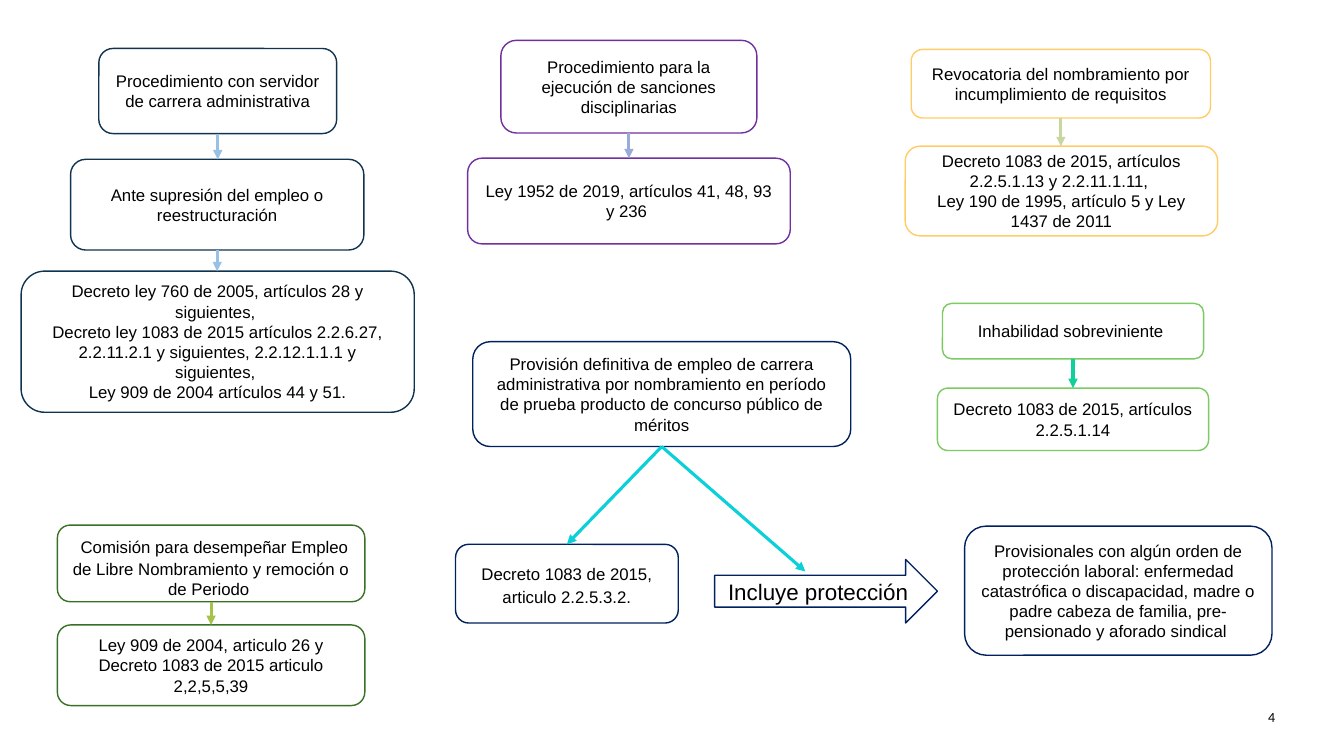
from lxml.etree import SubElement
from pptx import Presentation
from pptx.dml.color import RGBColor
from pptx.enum.shapes import MSO_CONNECTOR, MSO_SHAPE
from pptx.enum.text import MSO_ANCHOR, PP_ALIGN
from pptx.oxml.ns import qn
from pptx.util import Pt

COLORS = {
    "white": "FFFFFF", "black": "000000", "petrol": "103350", "purple": "7030A0",
    "amber": "FFCC66", "forest": "387026", "green": "7CCA62", "navy": "002060",
    "sky": "97C1E5", "lavender": "97ACD9", "olive": "C6D79F", "lime": "A5C249",
    "mint": "10CF9B", "cyan": "0BD0D9",
}

# Vertical chains: (outline, arrow colour, [(left, top, width, height, paragraphs), ...])
CHAINS = [
    ("petrol", "sky", [
        (70.6, 34.6, 169.9, 60.8, ["Procedimiento con servidor de carrera administrativa"]),
        (50.4, 113.8, 209.5, 64.8, ["Ante supresión del empleo o reestructuración"]),
        (15.1, 193.7, 280.8, 100.8, [
            "Decreto ley 760 de 2005, artículos 28 y siguientes, ",
            "Decreto ley 1083 de 2015 artículos 2.2.6.27, 2.2.11.2.1 y siguientes, "
            "2.2.12.1.1.1 y siguientes, ",
            "Ley 909 de 2004 artículos 44 y 51."]),
    ]),
    ("purple", "lavender", [
        (357.8, 28.8, 182.9, 66.2,
         ["Procedimiento para la ejecución de sanciones disciplinarias"]),
        (334.1, 113, 230.4, 61.2, ["Ley 1952 de 2019, artículos 41, 48, 93 y 236 "]),
    ]),
    ("amber", "olive", [
        (650.9, 35.3, 213.8, 49,
         ["Revocatoria del nombramiento por incumplimiento de requisitos"]),
        (646.6, 104.4, 223.2, 64.1, [
            "Decreto 1083 de 2015, artículos 2.2.5.1.13 y 2.2.11.1.11, ",
            "Ley 190 de 1995, artículo 5 y Ley 1437 de 2011"]),
    ]),
    ("forest", "lime", [
        (41, 375.1, 219.6, 54.7,
         [" Comisión para desempeñar Empleo de Libre Nombramiento y remoción o de Periodo "]),
        (41, 446.4, 219.6, 57.6,
         ["Ley 909 de 2004, articulo 26 y Decreto 1083 de 2015 articulo 2,2,5,5,39"]),
    ]),
    ("green", "mint", [
        (673.2, 216.7, 186.5, 39.6, ["Inhabilidad sobreviniente "]),
        (669.6, 277.2, 193.7, 44.6, ["Decreto 1083 de 2015, artículos 2.2.5.1.14"]),
    ]),
]

PROVISION = (337.7, 244.1, 270, 74.9, [
    "Provisión definitiva de empleo de carrera administrativa por nombramiento en período "
    "de prueba producto de concurso público de méritos"])
DECREE = (325.4, 388.8, 159.1, 56.2, ["Decreto 1083 de 2015, articulo 2.2.5.3.2."])
PROTECTION = (510.5, 399.6, 159.1, 45.4, ["Incluye protección"])
PROVISIONALS = (689, 375.8, 219.6, 92.2, [
    "Provisionales con algún orden de protección laboral: enfermedad catastrófica o "
    "discapacidad, madre o padre cabeza de familia, pre-pensionado y aforado sindical "])
PROTECTION_TIP = (575.3, 408.2)
PAGE_NUMBER = (886.3, 497.5, 31.7, 28.8, ["4"])
LEAD_SPACE_SIZE = 18


def color(name):
    return RGBColor.from_string(COLORS[name])


def fill_text(shape, paragraphs, size=12, font="Arial", align=PP_ALIGN.CENTER, spacing=None):
    frame = shape.text_frame
    frame.word_wrap = True
    frame.vertical_anchor = MSO_ANCHOR.MIDDLE
    for index, text in enumerate(paragraphs):
        para = frame.add_paragraph() if index else frame.paragraphs[0]
        para.alignment = align
        para.line_spacing = spacing
        words = text.lstrip()
        parts = [(words, size)]
        if words != text:
            parts.insert(0, (" ", LEAD_SPACE_SIZE))
        for part, part_size in parts:
            span = para.add_run()
            span.text = part
            span.font.size = Pt(part_size)
            span.font.name = font
            span.font.color.rgb = color("black")


def add_box(page, box, outline, kind=MSO_SHAPE.ROUNDED_RECTANGLE, **text_style):
    *bounds, paragraphs = box
    shape = page.shapes.add_shape(kind, *map(Pt, bounds))
    shape.shadow.inherit = False
    shape.fill.solid()
    shape.fill.fore_color.rgb = color("white")
    shape.line.color.rgb = color(outline)
    shape.line.width = Pt(1)
    fill_text(shape, paragraphs, **text_style)


def add_arrow(page, start, end, tint):
    arrow = page.shapes.add_connector(MSO_CONNECTOR.STRAIGHT, *map(Pt, start + end))
    arrow.line.color.rgb = color(tint)
    arrow.line.width = Pt(2.25)
    SubElement(arrow.line._get_or_add_ln(), qn("a:tailEnd"), type="triangle")
    SubElement(arrow._element.spPr, qn("a:effectLst"))


def top_center(box):
    return box[0] + box[2] / 2, box[1]


def bottom_center(box):
    return box[0] + box[2] / 2, box[1] + box[3]


def main():
    deck = Presentation()
    deck.slide_width, deck.slide_height = Pt(960), Pt(540)
    page = deck.slides.add_slide(deck.slide_layouts[6])

    number = page.shapes.add_textbox(*map(Pt, PAGE_NUMBER[:4]))
    fill_text(number, PAGE_NUMBER[4], size=10, font="Calibri", align=PP_ALIGN.RIGHT)

    for outline, tint, boxes in CHAINS:
        for box in boxes:
            add_box(page, box, outline)
        for upper, lower in zip(boxes, boxes[1:]):
            x, y = bottom_center(upper)
            add_arrow(page, (x, y), (x, lower[1]), tint)

    add_box(page, PROVISION, "navy")
    add_box(page, DECREE, "navy", spacing=1.15)
    add_box(page, PROTECTION, "navy", kind=MSO_SHAPE.RIGHT_ARROW, size=16)
    add_box(page, PROVISIONALS, "navy")
    for end in (PROTECTION_TIP, top_center(DECREE)):
        add_arrow(page, bottom_center(PROVISION), end, "cyan")

    deck.save("out.pptx")


if __name__ == "__main__":
    main()
